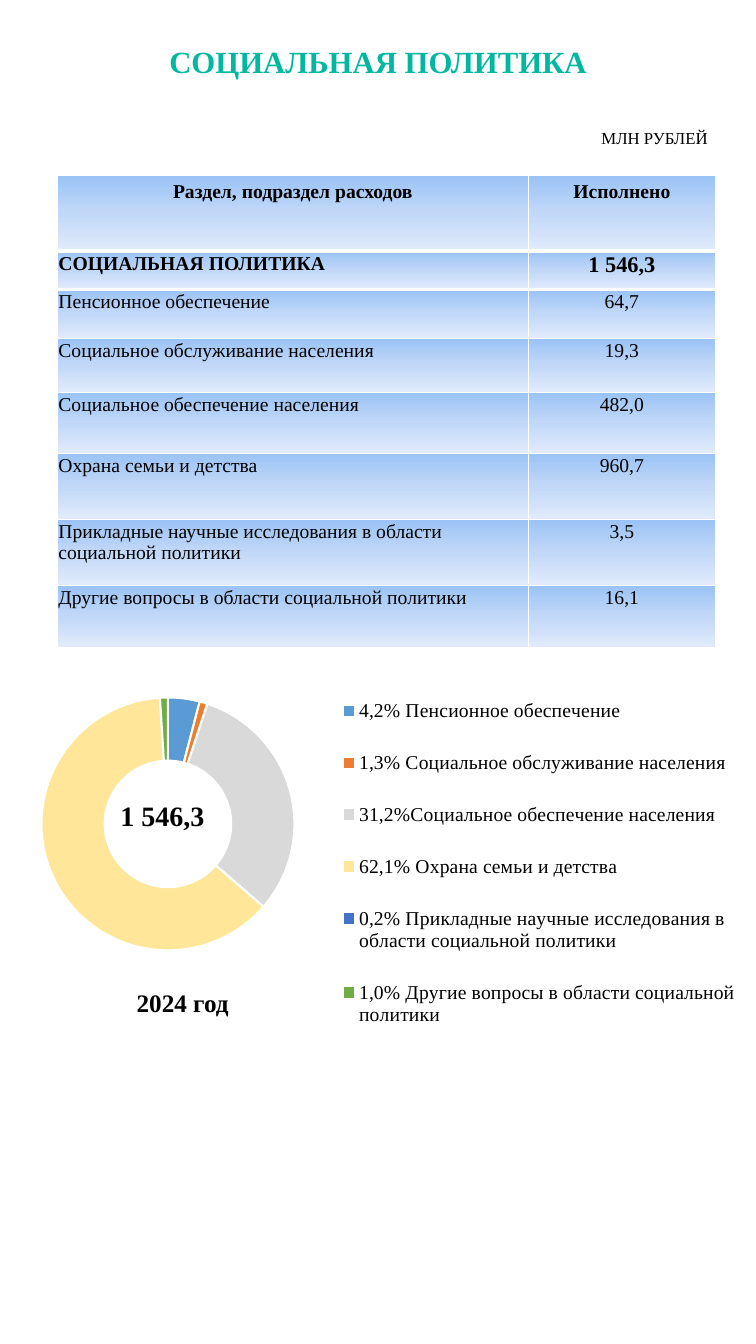
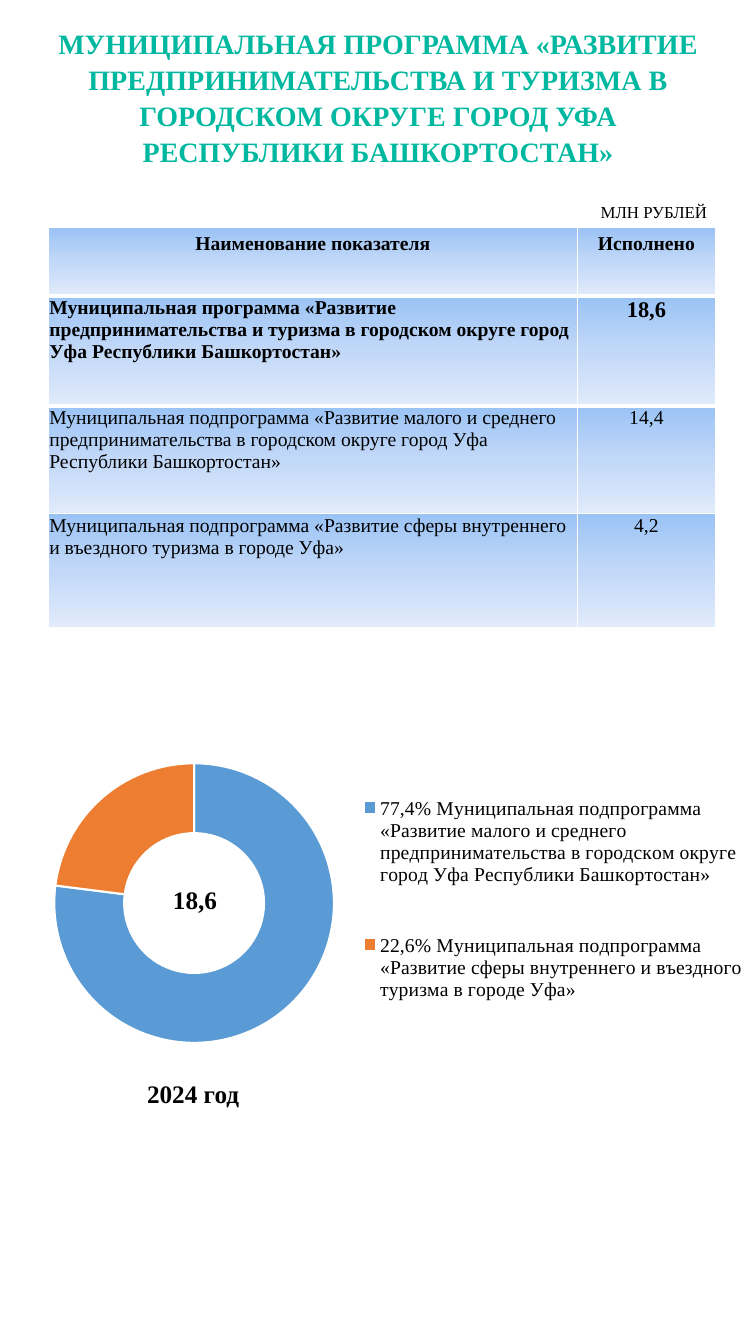
from pptx import Presentation
from pptx.chart.data import CategoryChartData as Data
from pptx.dml.color import RGBColor as Rgb
from pptx.enum.chart import XL_CHART_TYPE as Kind, XL_LEGEND_POSITION as Side
from pptx.enum.text import MSO_ANCHOR as Anchor, MSO_AUTO_SIZE as Auto, PP_ALIGN as Align
from pptx.oxml import parse_xml as xml
from pptx.oxml.ns import nsdecls, qn
from pptx.util import Pt

FACE = "Times New Roman"
INK, TEAL, WHITE = "000000", "00B8A0", "FFFFFF"
TONES = ["5B9BD5", "ED7D31", "D9D9D9", "FFE699", "4472C4", "70AD47"]
STOPS = [(0, "9AC3F5"), (50, "C2D8F8"), (100, "E1EBFB")]
YEAR, UNIT = "2024 год", "МЛН РУБЛЕЙ"


def color(code):
    return Rgb.from_string(code)


def style(font, size, bold=False, tone=INK):
    font.name, font.size, font.bold = FACE, Pt(size), bold
    font.color.rgb = color(tone)


def heading(slide, box, text, size):
    title = slide.shapes.title
    title.left, title.top, title.width, title.height = map(Pt, box)
    frame = title.text_frame
    frame.text = text
    frame.word_wrap = True
    frame.auto_size = Auto.SHAPE_TO_FIT_TEXT
    frame.vertical_anchor = Anchor.MIDDLE
    para = frame.paragraphs[0]
    para.alignment = Align.CENTER
    para.line_spacing, para.space_after = 1.07, Pt(8)
    style(para.font, size, True, TEAL)


def label(slide, box, text, size, bold=True, align=Align.LEFT):
    frame = slide.shapes.add_textbox(*map(Pt, box)).text_frame
    frame.word_wrap = True
    frame.text = text
    para = frame.paragraphs[0]
    para.alignment = align
    style(para.font, size, bold)


def rule(cell, edge):
    cell._tc.get_or_add_tcPr().append(xml(
        f'<a:{edge} {nsdecls("a")} w="{Pt(3)}"><a:solidFill>'
        f'<a:srgbClr val="{WHITE}"/></a:solidFill></a:{edge}>'))


def shade(cell):
    stops = "".join(
        f'<a:gs pos="{pos * 1000}"><a:srgbClr val="{code}"/></a:gs>'
        for pos, code in STOPS)
    cell._tc.get_or_add_tcPr().append(xml(
        f'<a:gradFill {nsdecls("a")} rotWithShape="1"><a:gsLst>{stops}</a:gsLst>'
        '<a:lin ang="5400000" scaled="0"/></a:gradFill>'))


def grid(slide, spot, cols, rows):
    high = sum(row[0] for row in rows)
    box = (*spot, sum(cols), high)
    table = slide.shapes.add_table(len(rows), len(cols), *map(Pt, box)).table
    table.horz_banding = False
    for col, width in zip(table.columns, cols):
        col.width = Pt(width)
    for i, (height, *texts) in enumerate(rows):
        table.rows[i].height = Pt(height)
        for j, text in enumerate(texts):
            cell = table.cell(i, j)
            cell.text = text
            if i:
                cell.margin_left = cell.margin_right = Pt(0.75)
                cell.margin_top, cell.margin_bottom = Pt(1), 0
            if i < 2:
                rule(cell, "lnT" if i else "lnB")
            shade(cell)
            para = cell.text_frame.paragraphs[0]
            para.alignment = Align.CENTER if j or not i else Align.LEFT
            style(para.font, 16 if (i, j) == (1, 1) else 14, i < 2)


def layout(area, inner=False):
    target = '<c:layoutTarget val="inner"/>' if inner else ""
    parts = "".join(f'<c:{tag} val="{val}"/>' for tag, val in zip("xywh", area))
    return xml(
        f'<c:layout {nsdecls("c")}><c:manualLayout>{target}'
        '<c:xMode val="edge"/><c:yMode val="edge"/>'
        f'{parts}</c:manualLayout></c:layout>')


def clear(node):
    for old in node.findall(qn("c:layout")):
        node.remove(old)


def ring(slide, box, items, area, keys):
    data = Data()
    data.categories = [name for name, val in items]
    data.add_series("Series 1", [val for name, val in items])
    chart = slide.shapes.add_chart(Kind.DOUGHNUT, *map(Pt, box), data).chart
    chart.has_title = False
    style(chart.font, 10)
    chart.has_legend = True
    legend = chart.legend
    legend.position = Side.RIGHT
    legend.include_in_layout = False
    style(legend.font, 14)
    clear(legend._element)
    legend._element.find(qn("c:legendPos")).addnext(layout(keys))
    plot = chart.plots[0]
    plot.vary_by_categories = True
    plot._element.find(qn("c:holeSize")).set("val", "75")
    zone = plot._element.getparent()
    clear(zone)
    zone.insert(0, layout(area, True))
    for i in range(len(items)):
        look = plot.series[0].points[i].format
        look.fill.solid()
        look.fill.fore_color.rgb = color(TONES[i])
        look.line.color.rgb = color(WHITE)
        look.line.width = Pt(1.5)


def social(slide):
    heading(slide, (0, 25, 540, 36), "СОЦИАЛЬНАЯ ПОЛИТИКА", 22)
    label(slide, (422.5, 87.5, 108, 22), UNIT, 12, False)
    grid(slide, (41, 125.5), (336.5, 133.5), [
        (54, "Раздел, подраздел расходов", "Исполнено"),
        (27.4, "СОЦИАЛЬНАЯ ПОЛИТИКА", "1 546,3"),
        (35, "Пенсионное обеспечение", "64,7"),
        (38.5, "Социальное обслуживание населения", "19,3"),
        (43.5, "Социальное обеспечение населения", "482,0"),
        (47.2, "Охрана семьи и детства", "960,7"),
        (47.2, "Прикладные научные исследования в области социальной политики", "3,5"),
        (44, "Другие вопросы в области социальной политики", "16,1")])
    ring(slide, (15, 476, 525, 278), [
        ("4,2% Пенсионное обеспечение", 4),
        ("1,3% Социальное обслуживание населения", 1),
        ("31,2%Социальное обеспечение населения", 31),
        ("62,1% Охрана семьи и детства", 62),
        ("0,2% Прикладные научные исследования в области социальной политики", 0),
        ("1,0% Другие вопросы в области социальной политики", 1)],
        (0.02, 0.08, 0.36, 0.65), (0.42, 0.01, 0.57, 0.99))
    label(slide, (69, 566.5, 94, 32), "1 546,3", 20, align=Align.CENTER)
    label(slide, (90.5, 702, 86, 32), YEAR, 18)


def program(slide):
    heading(slide, (0, 13, 540, 111),
            "МУНИЦИПАЛЬНАЯ ПРОГРАММА «РАЗВИТИЕ ПРЕДПРИНИМАТЕЛЬСТВА И ТУРИЗМА В "
            "ГОРОДСКОМ ОКРУГЕ ГОРОД УФА\vРЕСПУБЛИКИ БАШКОРТОСТАН»", 20)
    label(slide, (422, 140.5, 108, 22), UNIT, 12, False)
    small = ("Муниципальная подпрограмма «Развитие малого и среднего "
             "предпринимательства в городском округе город Уфа Республики Башкортостан»")
    tour = ("Муниципальная подпрограмма «Развитие сферы внутреннего и въездного "
            "туризма в городе Уфа»")
    grid(slide, (34.5, 162.5), (378, 98.5), [
        (49, "Наименование показателя", "Исполнено"),
        (78.5, "Муниципальная программа «Развитие предпринимательства и туризма "
               "в городском округе город Уфа Республики Башкортостан»", "18,6"),
        (77, small, "14,4"),
        (81, tour, "4,2")])
    ring(slide, (1, 518.5, 540, 266.5),
         [("77,4% " + small, 77), ("22,6% " + tour, 23)],
         (0.07, 0.1, 0.37, 0.75), (0.46, 0.06, 0.54, 0.81))
    label(slide, (116.5, 628, 50, 29), "18,6", 18)
    label(slide, (98, 767, 86, 31), YEAR, 18)


def main():
    deck = Presentation()
    deck.slide_width, deck.slide_height = Pt(540), Pt(960)
    for build in (social, program):
        build(deck.slides.add_slide(deck.slide_layouts[5]))
    deck.save("out.pptx")


if __name__ == "__main__":
    main()
